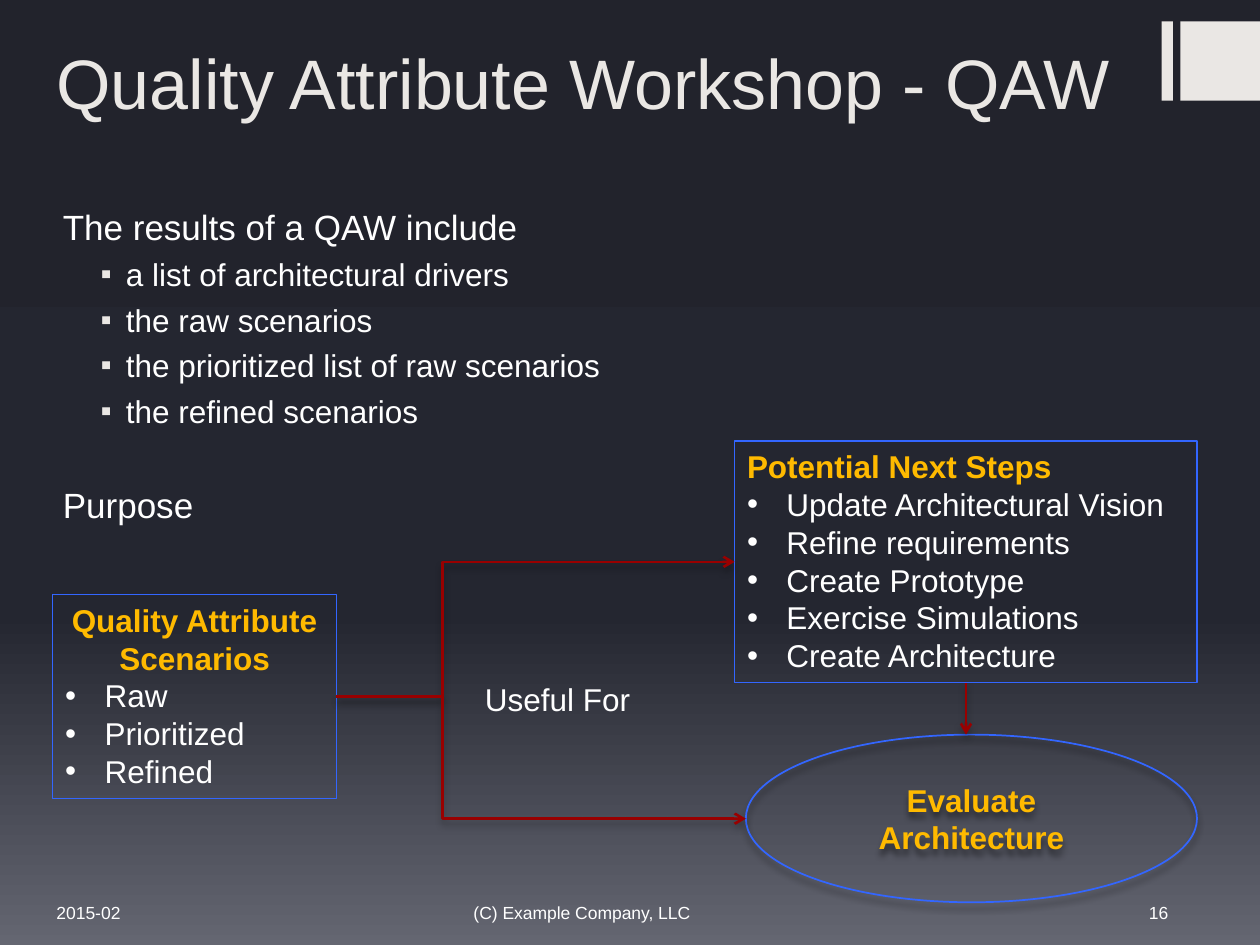
from copy import deepcopy
from dataclasses import dataclass

from lxml.etree import SubElement
from pptx import Presentation
from pptx.dml.color import RGBColor
from pptx.enum.shapes import MSO_CONNECTOR as Connector, MSO_SHAPE as Shape
from pptx.enum.text import MSO_ANCHOR as Anchor, MSO_AUTO_SIZE as AutoSize, PP_ALIGN as Align
from pptx.oxml.ns import qn
from pptx.util import Pt

FONT = "Arial"
CREAM, WHITE, GOLD, BLUE, RED = "EAE7E4", "FFFFFF", "FFBA00", "3366FF", "990000"
BACKGROUND = [(0, "22232C"), (0.65, "242630"), (1, "646671")]


@dataclass(frozen=True)
class Box:
    left: float
    top: float
    width: float
    height: float

    def lengths(self) -> list:
        return [Pt(value) for value in (self.left, self.top, self.width, self.height)]


@dataclass(frozen=True)
class Line:
    text: str
    size: float = 18
    color: str = WHITE
    bold: bool = False
    align: Align = Align.LEFT
    before: float = 0
    margin: float = 0
    indent: float = 0
    bullet: str = ""
    bullet_color: str = WHITE


@dataclass(frozen=True)
class Arrow:
    start: tuple[float, float]
    end: tuple[float, float]
    bend: float | None = None


def rgb(color: str) -> RGBColor:
    return RGBColor.from_string(color)


def heading(text: str, align: Align = Align.CENTER) -> Line:
    return Line(text, color=GOLD, bold=True, align=align)


def dot(text: str) -> Line:
    return Line(text, margin=22.5, indent=-22.5, bullet="•")


def square(text: str) -> Line:
    return Line(text, before=4.4, margin=39.6, indent=-14.4, bullet="▪", bullet_color=CREAM)


def write_lines(text_frame, lines: list[Line], anchor: Anchor = Anchor.TOP) -> None:
    text_frame.text = "\n".join(line.text for line in lines)
    text_frame.vertical_anchor = anchor
    text_frame.word_wrap = True
    for paragraph, line in zip(text_frame.paragraphs, lines):
        paragraph.alignment = line.align
        paragraph.space_before = Pt(line.before)
        font = paragraph.runs[0].font
        font.name, font.size, font.bold = FONT, Pt(line.size), line.bold
        font.color.rgb = rgb(line.color)
        properties = paragraph._p.get_or_add_pPr()
        properties.set("marL", str(Pt(line.margin)))
        properties.set("indent", str(Pt(line.indent)))
        if line.bullet:
            color = SubElement(properties, qn("a:buClr"))
            SubElement(color, qn("a:srgbClr"), val=line.bullet_color)
            SubElement(properties, qn("a:buFont"), typeface=FONT)
            SubElement(properties, qn("a:buChar"), char=line.bullet)


def add_text(slide, box: Box, lines: list[Line], anchor: Anchor = Anchor.TOP):
    text_frame = slide.shapes.add_textbox(*box.lengths()).text_frame
    write_lines(text_frame, lines, anchor)
    return text_frame


def add_block(slide, box: Box) -> None:
    block = slide.shapes.add_shape(Shape.RECTANGLE, *box.lengths())
    block.shadow.inherit = False
    block.fill.solid()
    block.fill.fore_color.rgb = rgb(CREAM)
    block.line.fill.background()


def add_outline(slide, kind: Shape, box: Box, weight: float, lines: list[Line], anchor: Anchor):
    shape = slide.shapes.add_shape(kind, *box.lengths())
    shape.shadow.inherit = False
    shape.fill.background()
    shape.line.color.rgb = rgb(BLUE)
    shape.line.width = Pt(weight)
    write_lines(shape.text_frame, lines, anchor)
    return shape


def add_shadow(effects, blur: float, opacity: int) -> None:
    """Put a soft black shadow straight below into an effect list."""
    shadow = SubElement(effects, qn("a:outerShdw"), blurRad=str(Pt(blur)),
                        dist=str(Pt(3)), dir="5400000", rotWithShape="0")
    color = SubElement(shadow, qn("a:srgbClr"), val="000000")
    SubElement(color, qn("a:alpha"), val=str(opacity * 1000))


def add_arrow(slide, arrow: Arrow) -> None:
    kind = Connector.STRAIGHT if arrow.bend is None else Connector.ELBOW
    ends = [Pt(value) for value in arrow.start + arrow.end]
    connector = slide.shapes.add_connector(kind, *ends)
    connector.line.color.rgb = rgb(RED)
    connector.line.width = Pt(1.5)
    SubElement(connector.line._get_or_add_ln(), qn("a:tailEnd"), type="arrow")
    properties = connector._element.spPr
    if arrow.bend is not None:
        geometry = properties.find(qn("a:prstGeom"))
        guides = geometry.find(qn("a:avLst"))
        if guides is None:
            guides = SubElement(geometry, qn("a:avLst"))
        share = (arrow.bend - arrow.start[0]) / (arrow.end[0] - arrow.start[0])
        SubElement(guides, qn("a:gd"), name="adj1", fmla=f"val {round(share * 100000)}")
    add_shadow(SubElement(properties, qn("a:effectLst")), 4, 28)


def paint_background(slide) -> None:
    fill = slide.background.fill
    fill.gradient()
    fill.gradient_angle = 270
    stop_list = slide.element.xpath(".//a:gsLst")[0]
    stop_list.append(deepcopy(stop_list[0]))
    for stop, (position, color) in zip(fill.gradient_stops, BACKGROUND):
        stop.position = position
        stop.color.rgb = rgb(color)


def main() -> None:
    presentation = Presentation()
    presentation.slide_width, presentation.slide_height = Pt(720), Pt(540)
    slide = presentation.slides.add_slide(presentation.slide_layouts[6])
    paint_background(slide)

    for left, width in ((663.8, 6.5), (674.6, 45.4)):
        add_block(slide, Box(left, 12.2, width, 45.4))

    add_text(slide, Box(25.2, 11.5, 622.8, 62.6),
             [Line("Quality Attribute Workshop - QAW", 40, CREAM)], Anchor.BOTTOM)
    results = ["a list of architectural drivers", "the raw scenarios",
               "the prioritized list of raw scenarios", "the refined scenarios"]
    add_text(slide, Box(25.2, 113.8, 649.4, 188.6), [
        Line("The results of a QAW include", 20, before=4.4, margin=3.6),
        *map(square, results),
        Line("Purpose", 20, before=31, margin=3.6),
    ])

    footers = [
        (Box(25.2, 507.4, 93.6, 23.8), "2015-02", Align.LEFT),
        (Box(263.5, 507.4, 177.1, 23.8), "(C) Example Company, LLC", Align.LEFT),
        (Box(600.5, 507.4, 74.2, 23.8), "16", Align.RIGHT),
    ]
    for box, text, align in footers:
        add_text(slide, box, [Line(text, 10, align=align)], Anchor.BOTTOM)

    scenarios = [heading("Quality Attribute"), heading("Scenarios"),
                 *map(dot, ["Raw", "Prioritized", "Refined"])]
    next_steps = [heading("Potential Next Steps", Align.LEFT),
                  *map(dot, ["Update Architectural Vision", "Refine requirements",
                             "Create Prototype", "Exercise Simulations",
                             "Create Architecture"])]
    for box, lines in ((Box(30.2, 339.8, 162, 116.6), scenarios),
                       (Box(419.8, 252, 264.2, 138.2), next_steps)):
        panel = add_outline(slide, Shape.RECTANGLE, box, 0.75, lines, Anchor.TOP)
        panel.text_frame.auto_size = AutoSize.SHAPE_TO_FIT_TEXT

    evaluation = add_outline(slide, Shape.OVAL, Box(426.2, 419.8, 257.8, 95.8), 1,
                             [heading("Evaluate"), heading("Architecture")], Anchor.MIDDLE)
    add_shadow(evaluation._element.spPr.find(qn("a:effectLst")), 3.8, 48)

    fork = (192.2, 398.1)
    for arrow in (Arrow(fork, (419.8, 321.1), bend=252.8),
                  Arrow(fork, (426.2, 467.8), bend=252.8),
                  Arrow((552, 390.2), (552, 419.8))):
        add_arrow(slide, arrow)

    label = add_text(slide, Box(270, 385.2, 98.6, 28.8), [Line("Useful For")])
    label.word_wrap = False
    label.auto_size = AutoSize.SHAPE_TO_FIT_TEXT

    presentation.save("out.pptx")


if __name__ == "__main__":
    main()
